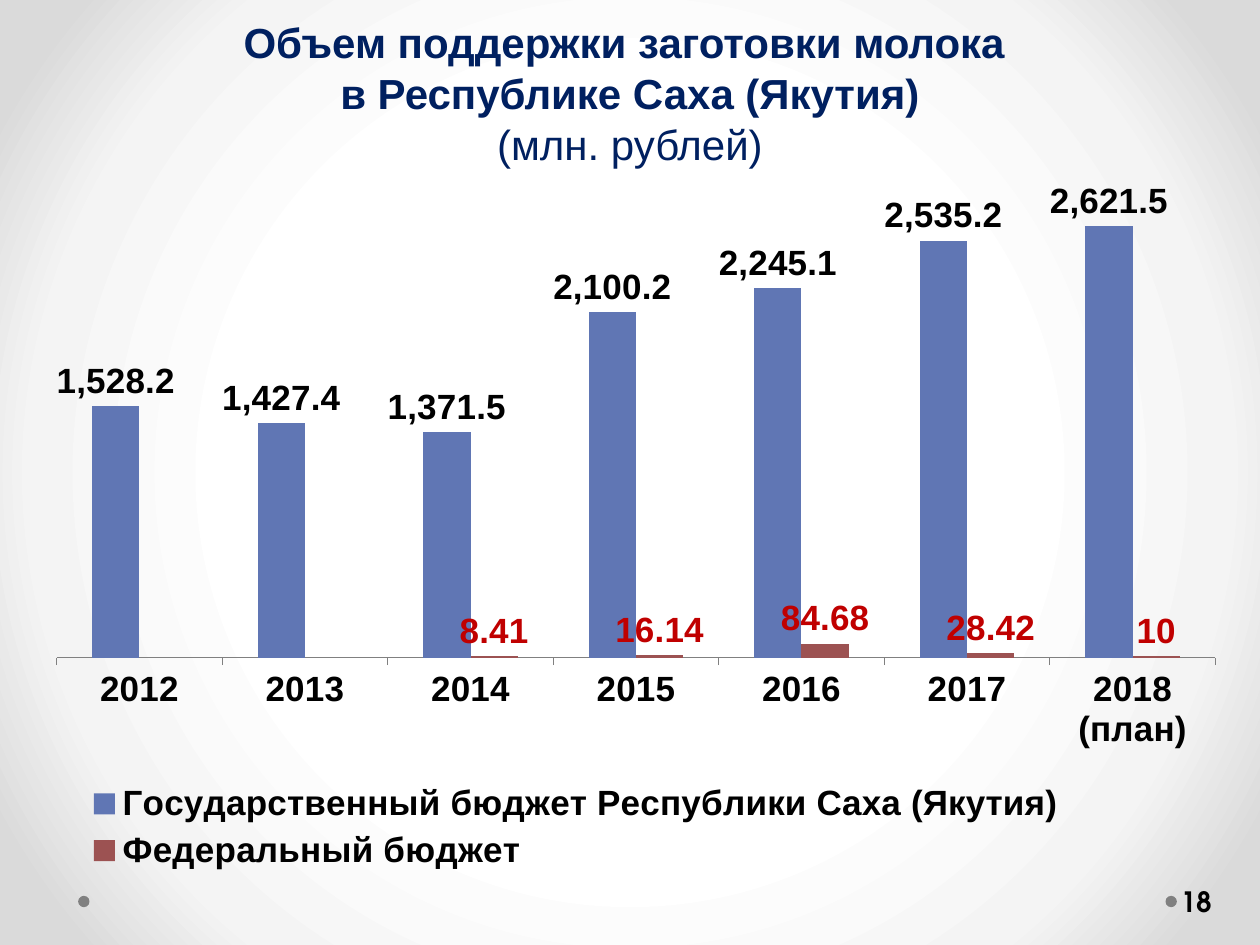
from pptx import Presentation, util as u
from pptx.chart.data import CategoryChartData
from pptx.dml.color import RGBColor
from pptx.enum import chart as c, shapes, text
from pptx.oxml import parse_xml
from pptx.oxml.ns import nsdecls, qn

YEARS = ["2012", "2013", "2014", "2015", "2016", "2017", "2018 (план)"]
BUDGETS = [
    ("Государственный бюджет Республики Саха (Якутия)", "6076B4", "000000", "#,##0.0",
     [1528.2, 1427.4, 1371.5, 2100.2, 2245.1, 2535.2, 2621.5]),
    ("Федеральный бюджет", "9C5252", "C00000", "General",
     [None, None, 8.41, 16.14, 84.68, 28.42, 10]),
]


def rgb(value):
    """Turn a hex string into a colour."""
    return RGBColor.from_string(value)


def style_font(font, size, color, bold=False, name="Arial"):
    """Set the look of a font."""
    font.size, font.bold, font.name = u.Pt(size), bold, name
    font.color.rgb = rgb(color)


def set_background(slide, stops):
    """Fill the background with a circular gradient."""
    slide.background.fill.gradient()
    gradient = slide.element.find(".//" + qn("a:gradFill"))
    marks = "".join(f'<a:gs pos="{position * 1000}"><a:srgbClr val="{color}"/></a:gs>'
                    for position, color in stops)
    circle = parse_xml(
        f'<a:gradFill {nsdecls("a")} rotWithShape="1"><a:gsLst>{marks}</a:gsLst>'
        '<a:path path="circle"><a:fillToRect l="50000" t="50000" r="50000" b="50000"/>'
        '</a:path></a:gradFill>')
    gradient.getparent().replace(gradient, circle)


def add_dot(slide, left, top, size, color):
    """Draw a small filled circle."""
    dot = slide.shapes.add_shape(shapes.MSO_SHAPE.OVAL, u.Inches(left), u.Inches(top),
                                 u.Inches(size), u.Inches(size))
    dot.shadow.inherit = False
    dot.fill.solid()
    dot.fill.fore_color.rgb = rgb(color)
    dot.line.fill.background()


def add_text(slide, box, lines, size, color, name="Arial", align="LEFT",
             anchor="MIDDLE", left_inset=0.1, right_inset=0.1, spacing=None):
    """Add one paragraph of (wording, bold) lines."""
    frame = slide.shapes.add_textbox(*map(u.Inches, box)).text_frame
    frame.word_wrap = True
    frame.vertical_anchor = text.MSO_ANCHOR[anchor]
    frame.margin_left, frame.margin_right = u.Inches(left_inset), u.Inches(right_inset)
    paragraph = frame.paragraphs[0]
    paragraph.alignment = text.PP_ALIGN[align]
    paragraph.line_spacing = spacing
    for index, (wording, bold) in enumerate(lines):
        if index:
            paragraph.add_line_break()
        run = paragraph.add_run()
        run.text = wording
        style_font(run.font, size, color, bold, name)


def set_layout(element, x, y, width, height, inner=False):
    """Place a chart part by fractions of the chart area."""
    for old in element.findall(qn("c:layout")):
        element.remove(old)
    target = '<c:layoutTarget val="inner"/>' if inner else ""
    layout = parse_xml(
        f'<c:layout {nsdecls("c")}><c:manualLayout>{target}'
        '<c:xMode val="edge"/><c:yMode val="edge"/>'
        f'<c:x val="{x}"/><c:y val="{y}"/><c:w val="{width}"/><c:h val="{height}"/>'
        '</c:manualLayout></c:layout>')
    if inner:
        element.insert(0, layout)
    else:
        element.find(qn("c:legendPos")).addnext(layout)


def style_series(series, fill, label_color, number_format):
    """Colour a series and show its values above the columns."""
    series.format.fill.solid()
    series.format.fill.fore_color.rgb = rgb(fill)
    labels = series.data_labels
    labels.show_value = True
    labels.position = c.XL_LABEL_POSITION.OUTSIDE_END
    labels.number_format, labels.number_format_is_linked = number_format, False
    style_font(labels.font, 20, label_color, True)


def add_budget_chart(slide, box):
    """Add the clustered columns of both budgets."""
    data = CategoryChartData()
    data.categories = YEARS
    for name, _, _, _, values in BUDGETS:
        data.add_series(name, values)
    chart = slide.shapes.add_chart(c.XL_CHART_TYPE.COLUMN_CLUSTERED,
                                   *map(u.Inches, box), data).chart
    chart.has_title = False
    style_font(chart.font, 10, "000000")
    plot = chart.plots[0]
    plot.gap_width, plot.overlap, plot.vary_by_categories = 150, 0, False
    for series, (_, fill, label_color, number_format, _) in zip(plot.series, BUDGETS):
        style_series(series, fill, label_color, number_format)

    years = chart.category_axis
    years.major_tick_mark = c.XL_TICK_MARK.OUTSIDE
    years.format.line.color.rgb = rgb("808080")
    style_font(years.tick_labels.font, 20, "000000", True)
    amounts = chart.value_axis
    amounts.minimum_scale, amounts.maximum_scale = 0, 3000
    amounts.has_major_gridlines = False
    amounts.visible = False

    chart.has_legend = True
    legend = chart.legend
    legend.position = c.XL_LEGEND_POSITION.RIGHT
    legend.include_in_layout = False
    style_font(legend.font, 20, "000000", True)
    plot_area = chart.element.find(".//" + qn("c:plotArea"))
    set_layout(plot_area, 0.026, 0.038, 0.957, 0.638, inner=True)
    set_layout(chart.element.find(".//" + qn("c:legend")), 0.03, 0.83, 0.85, 0.13)


def main():
    """Build the slide and save it."""
    presentation = Presentation()
    presentation.slide_width, presentation.slide_height = u.Inches(10), u.Inches(7.5)
    slide = presentation.slides.add_slide(presentation.slide_layouts[6])
    set_background(slide, [(50, "FFFFFF"), (76, "F4F4F4"), (92, "DADADA")])
    for left in (9.25, 0.62):
        add_dot(slide, left, 7.11, 0.09, "808080")
    title = [("Объем поддержки заготовки молока ", True),
             ("в Республике Саха (Якутия)", True), ("(млн. рублей)", False)]
    add_text(slide, (0.5, 0.13, 9, 1.26), title, 24, "002060", align="CENTER",
             anchor="BOTTOM", spacing=u.Pt(29))
    add_text(slide, (9.34, 6.95, 0.61, 0.4), [("18", True)], 16, "000000",
             name="TeX Gyre Adventor", left_inset=0.03, right_inset=0.05)
    add_budget_chart(slide, (0.2, 1.07, 9.61, 6.14))
    presentation.save("out.pptx")


if __name__ == "__main__":
    main()
